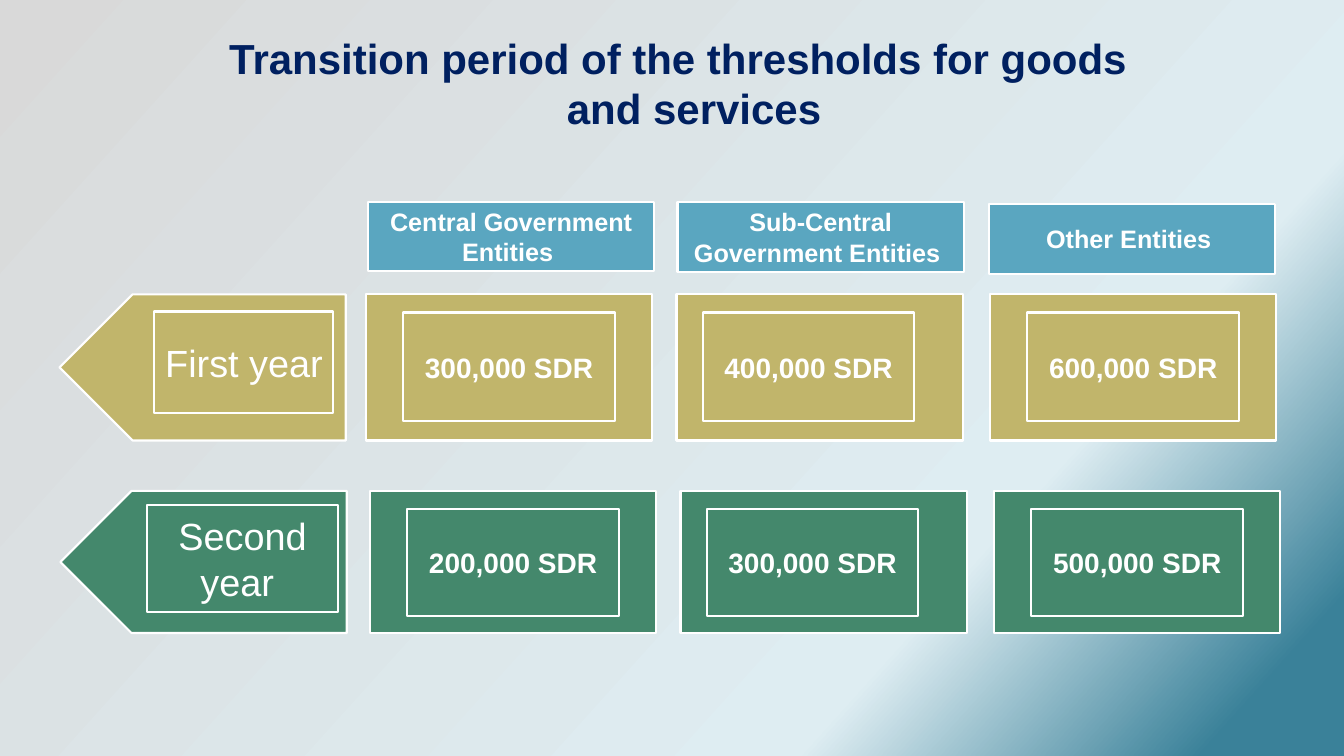
from copy import deepcopy

from pptx import Presentation
from pptx.dml.color import RGBColor
from pptx.enum.shapes import MSO_SHAPE as Shape
from pptx.enum.text import MSO_ANCHOR as Anchor, PP_ALIGN as Align
from pptx.oxml.ns import qn
from pptx.util import Inches, Pt

WHITE = RGBColor(0xFF, 0xFF, 0xFF)
NAVY = RGBColor(0x00, 0x20, 0x60)
BLUE = RGBColor(0x5A, 0xA6, 0xC0)
GOLD = RGBColor(0xC1, 0xB5, 0x6B)
GREEN = RGBColor(0x44, 0x88, 0x6C)
GRADIENT = [
    (0, RGBColor(0xD9, 0xD9, 0xD9)),
    (0.73, RGBColor(0xDE, 0xED, 0xF2)),
    (0.93, RGBColor(0x3A, 0x81, 0x99)),
]

FONT = "Arial"
COLUMN_WIDTH = 2.84
VALUE_WIDTH = 2.1
COLUMN_LEFTS = (3.65, 6.73, 9.84)
VALUE_INSETS = (0.37, 0.26, 0.37)
HEADERS = [
    ("Central Government Entities ", 3.65, 2, 0.69),
    ("Sub-Central Government Entities ", 6.72, 2, 0.7),
    ("Other Entities ", 9.81, 2.02, 0.7),
]


def paint_background(slide):
    fill = slide.background.fill
    fill.gradient()
    fill.gradient_angle = 318
    stop_list = slide.element.find(".//" + qn("a:gsLst"))
    stop_list.append(deepcopy(stop_list[-1]))
    for stop, (position, color) in zip(fill.gradient_stops, GRADIENT):
        stop.position = position
        stop.color.rgb = color


def style_text(paragraph, size, color, bold, align):
    paragraph.alignment = align
    paragraph.font.name = FONT
    paragraph.font.size = Pt(size)
    paragraph.font.bold = bold
    paragraph.font.color.rgb = color


def add_box(slide, bounds, color, kind=Shape.RECTANGLE):
    shape = slide.shapes.add_shape(kind, *map(Inches, bounds))
    shape.shadow.inherit = False
    shape.fill.solid()
    shape.fill.fore_color.rgb = color
    shape.line.color.rgb = WHITE
    shape.line.width = Pt(1.5)
    return shape


def add_label(slide, bounds, color, text, size, bold=True,
              align=Align.CENTER, margin=0.1):
    frame = add_box(slide, bounds, color).text_frame
    frame.word_wrap = True
    frame.vertical_anchor = Anchor.MIDDLE
    frame.margin_left = frame.margin_right = Inches(margin)
    frame.margin_top = frame.margin_bottom = Inches(margin)
    frame.text = text
    style_text(frame.paragraphs[0], size, WHITE, bold, align)


def add_title(slide, text):
    box = slide.shapes.add_textbox(
        Inches(1.85), Inches(0.22), Inches(9.76), Inches(1.21))
    frame = box.text_frame
    frame.word_wrap = True
    frame.margin_top = Inches(0.1)
    frame.text = text
    paragraph = frame.paragraphs[0]
    properties = paragraph._p.get_or_add_pPr()
    properties.set("marL", str(Inches(0.31)))
    properties.set("indent", str(Inches(-0.31)))
    style_text(paragraph, 30, NAVY, True, Align.CENTER)


def add_year_row(slide, color, arrow_left, top, height, shift,
                 year, year_bounds, year_align, value_height, values):
    arrow = add_box(slide, (arrow_left, top, COLUMN_WIDTH, height),
                    color, Shape.PENTAGON)
    arrow.adjustments[0] = 0.5
    arrow.element.spPr.find(qn("a:xfrm")).set("flipH", "1")
    add_label(slide, year_bounds, color, year, 27, False, year_align)
    for column_left, inset, value in zip(COLUMN_LEFTS, VALUE_INSETS, values):
        left = column_left + shift
        add_box(slide, (left, top, COLUMN_WIDTH, height), color)
        add_label(slide, (left + inset, top + 0.18, VALUE_WIDTH, value_height),
                  color, value, 20)


def main():
    presentation = Presentation()
    presentation.slide_width = Inches(13.33)
    presentation.slide_height = Inches(7.5)
    slide = presentation.slides.add_slide(presentation.slide_layouts[6])
    paint_background(slide)
    for text, left, top, height in HEADERS:
        add_label(slide, (left, top, COLUMN_WIDTH, height), BLUE, text, 18,
                  margin=0.13)
    add_year_row(slide, GREEN, 0.6, 4.87, 1.41, 0.02,
                 "Second year ", (1.46, 5.01, 1.89, 1.06), Align.CENTER, 1.06,
                 ("200,000 SDR", "300,000 SDR", "500,000 SDR"))
    add_year_row(slide, GOLD, 0.59, 2.92, 1.45, -0.02,
                 "First year ", (1.53, 3.09, 1.77, 1.01), Align.RIGHT, 1.08,
                 ("300,000 SDR", "400,000 SDR", "600,000 SDR"))
    add_title(slide, "Transition period of the thresholds for goods and services")
    presentation.save("out.pptx")


if __name__ == "__main__":
    main()
